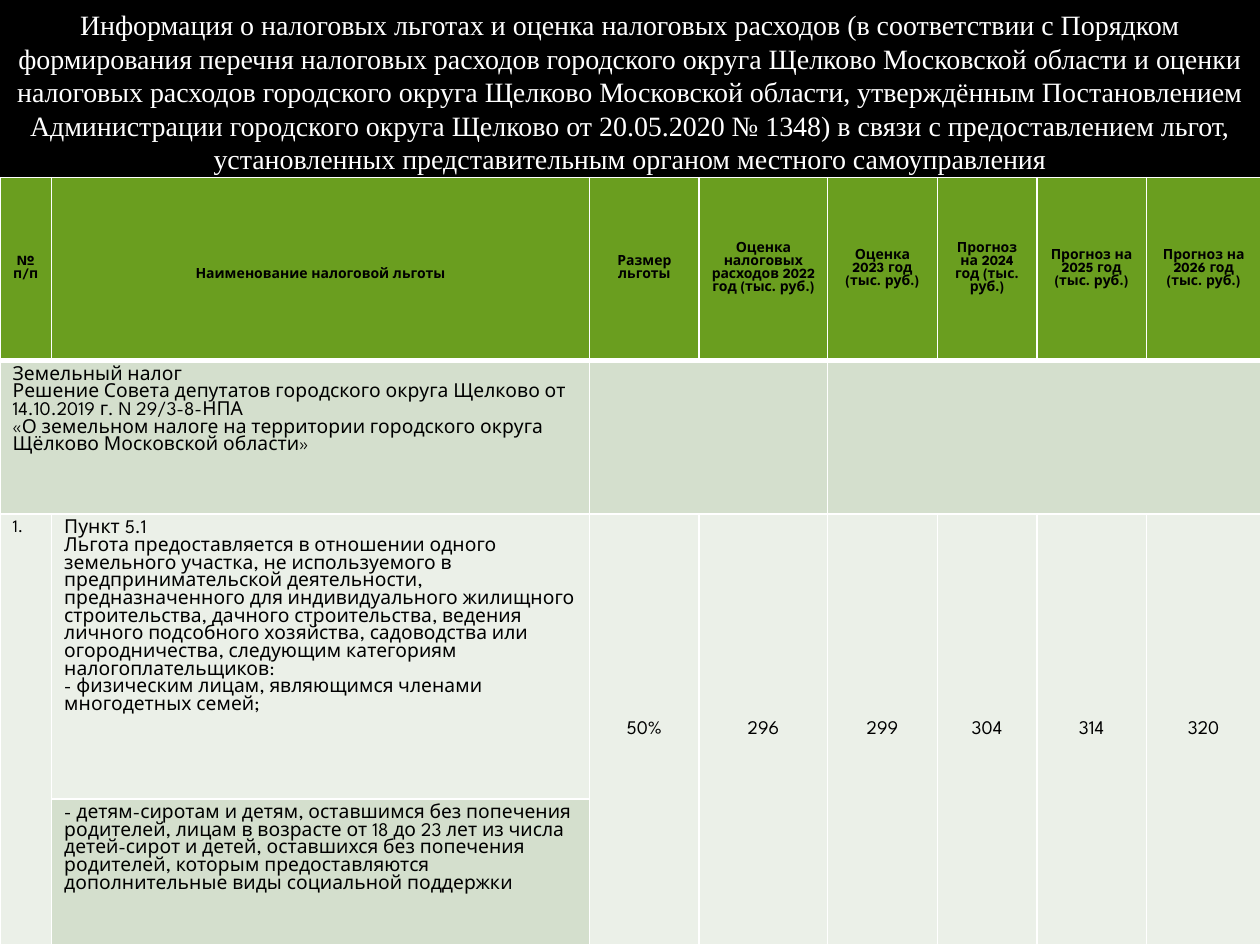
import pptx
import pptx.dml.color
import pptx.enum.text
import pptx.oxml
import pptx.oxml.ns
import pptx.util

Inches = pptx.util.Inches
Pt = pptx.util.Pt
ALIGN = pptx.enum.text.PP_ALIGN
ANCHOR = pptx.enum.text.MSO_ANCHOR

THEME = {
    "background": "000000", "title": "FFFFFF", "text": "000000", "border": "FFFFFF",
    "header": "6A9E1F", "dark_band": "D4DFCD", "light_band": "EBF0E8",
    "title_font": "Times New Roman", "table_font": "League Spartan",
    "title_size": 16, "header_size": 8, "number_size": 10, "body_size": 11,
}


def write_text(frame, text, *, size=THEME["body_size"], font=THEME["table_font"],
               color=THEME["text"], bold=False, align=ALIGN.LEFT):
    """Write one paragraph per line of text, all in the same format."""
    frame.word_wrap = True
    for index, line in enumerate(text.split("\n")):
        paragraph = frame.paragraphs[0] if index == 0 else frame.add_paragraph()
        paragraph.alignment = align
        paragraph.line_spacing = 1.0
        paragraph.space_before = Pt(0)
        run = paragraph.add_run()
        run.text = line
        run.font.name = font
        run.font.size = Pt(size)
        run.font.bold = bold
        run.font.color.rgb = pptx.dml.color.RGBColor.from_string(color)


def style_cell(cell, fill, top=1, bottom=1):
    """Give a cell white borders (widths in points) and a solid fill."""
    properties = cell._tc.get_or_add_tcPr()
    for side, width in (("L", 1), ("R", 1), ("T", top), ("B", bottom)):
        properties.append(pptx.oxml.parse_xml(
            f'<a:ln{side} {pptx.oxml.ns.nsdecls("a")} w="{Pt(width)}"><a:solidFill>'
            f'<a:srgbClr val="{THEME["border"]}"/></a:solidFill></a:ln{side}>'))
    cell.fill.solid()
    cell.fill.fore_color.rgb = pptx.dml.color.RGBColor.from_string(fill)


presentation = pptx.Presentation()
presentation.slide_width = Inches(10)
presentation.slide_height = Inches(7.5)
slide = presentation.slides.add_slide(presentation.slide_layouts[5])
slide.background.fill.solid()
slide.background.fill.fore_color.rgb = pptx.dml.color.RGBColor.from_string(THEME["background"])

# Title
title = slide.shapes.title
title.left, title.top = Inches(0), Inches(0.01)
title.width, title.height = Inches(10), Inches(1.45)
title.text_frame.vertical_anchor = ANCHOR.TOP
title.text_frame.auto_size = pptx.enum.text.MSO_AUTO_SIZE.NONE
write_text(
    title.text_frame,
    "Информация о налоговых льготах и оценка налоговых расходов (в соответствии с Порядком "
    "формирования перечня налоговых расходов городского округа Щелково Московской области и "
    "оценки налоговых расходов городского округа Щелково Московской области, утверждённым "
    "Постановлением Администрации городского округа Щелково от 20.05.2020 № 1348) в связи с "
    "предоставлением льгот, установленных представительным органом местного самоуправления",
    size=THEME["title_size"], font=THEME["title_font"], color=THEME["title"],
    align=ALIGN.CENTER)

# Table grid
column_widths = [0.41, 4.27, 0.87, 1.02, 0.87, 0.79, 0.87, 0.91]
row_heights = [1.45, 1.22, 2.26, 1.16]
table = slide.shapes.add_table(
    len(row_heights), len(column_widths), Inches(0), Inches(1.41),
    Inches(sum(column_widths)), Inches(sum(row_heights))).table
table.first_row = False
table.horz_banding = False
for column, width in zip(table.columns, column_widths):
    column.width = Inches(width)
for row, height in zip(table.rows, row_heights):
    row.height = Inches(height)

# Fills and borders, with a thick rule under the header
row_fills = [THEME["header"], THEME["dark_band"], THEME["light_band"], THEME["dark_band"]]
for row_index, fill in enumerate(row_fills):
    for cell in table.rows[row_index].cells:
        style_cell(cell, fill, top=3 if row_index == 1 else 1, bottom=3 if row_index == 0 else 1)

# Merged cells: the tax heading row, then every benefit column except the name
for first, last in ((0, 1), (2, 3), (4, 7)):
    table.cell(1, first).merge(table.cell(1, last))
for column_index in (0, 2, 3, 4, 5, 6, 7):
    table.cell(2, column_index).merge(table.cell(3, column_index))

# Header row
headers = [
    "№ п/п", "Наименование налоговой льготы", "Размер льготы",
    "Оценка налоговых расходов 2022 год (тыс. руб.)", "Оценка 2023 год (тыс. руб.)",
    "Прогноз на 2024 год (тыс. руб.)", "Прогноз на 2025 год (тыс. руб.)",
    "Прогноз на 2026 год (тыс. руб.)",
]
for cell, header in zip(table.rows[0].cells, headers):
    cell.vertical_anchor = ANCHOR.MIDDLE
    write_text(cell.text_frame, header, size=THEME["header_size"], bold=True, align=ALIGN.CENTER)
table.cell(0, 1).margin_top = Inches(0.15)
estimate_header = table.cell(0, 3)
estimate_header.margin_left = estimate_header.margin_right = Inches(0.08)

# Tax heading and benefit descriptions
write_text(
    table.cell(1, 0).text_frame,
    "Земельный налог\n"
    "Решение Совета депутатов городского округа Щелково от 14.10.2019 г. N 29/3-8-НПА\n"
    "«О земельном налоге на территории городского округа Щёлково Московской области»")
write_text(table.cell(2, 0).text_frame, "1.", size=THEME["number_size"])
write_text(
    table.cell(2, 1).text_frame,
    "Пункт 5.1\n"
    "Льгота предоставляется в отношении одного земельного участка, не используемого в "
    "предпринимательской деятельности, предназначенного для индивидуального жилищного "
    "строительства, дачного строительства, ведения личного подсобного хозяйства, садоводства "
    "или огородничества, следующим категориям налогоплательщиков:\n"
    "- физическим лицам, являющимся членами многодетных семей;")
write_text(
    table.cell(3, 1).text_frame,
    "- детям-сиротам и детям, оставшимся без попечения родителей, лицам в возрасте от 18 до 23 "
    "лет из числа детей-сирот и детей, оставшихся без попечения родителей, которым "
    "предоставляются дополнительные виды социальной поддержки")

# Benefit size and yearly amounts
for column_index, value in enumerate(["50%", "296", "299", "304", "314", "320"], start=2):
    cell = table.cell(2, column_index)
    cell.vertical_anchor = ANCHOR.MIDDLE
    write_text(cell.text_frame, value, align=ALIGN.CENTER)

presentation.save("out.pptx")
